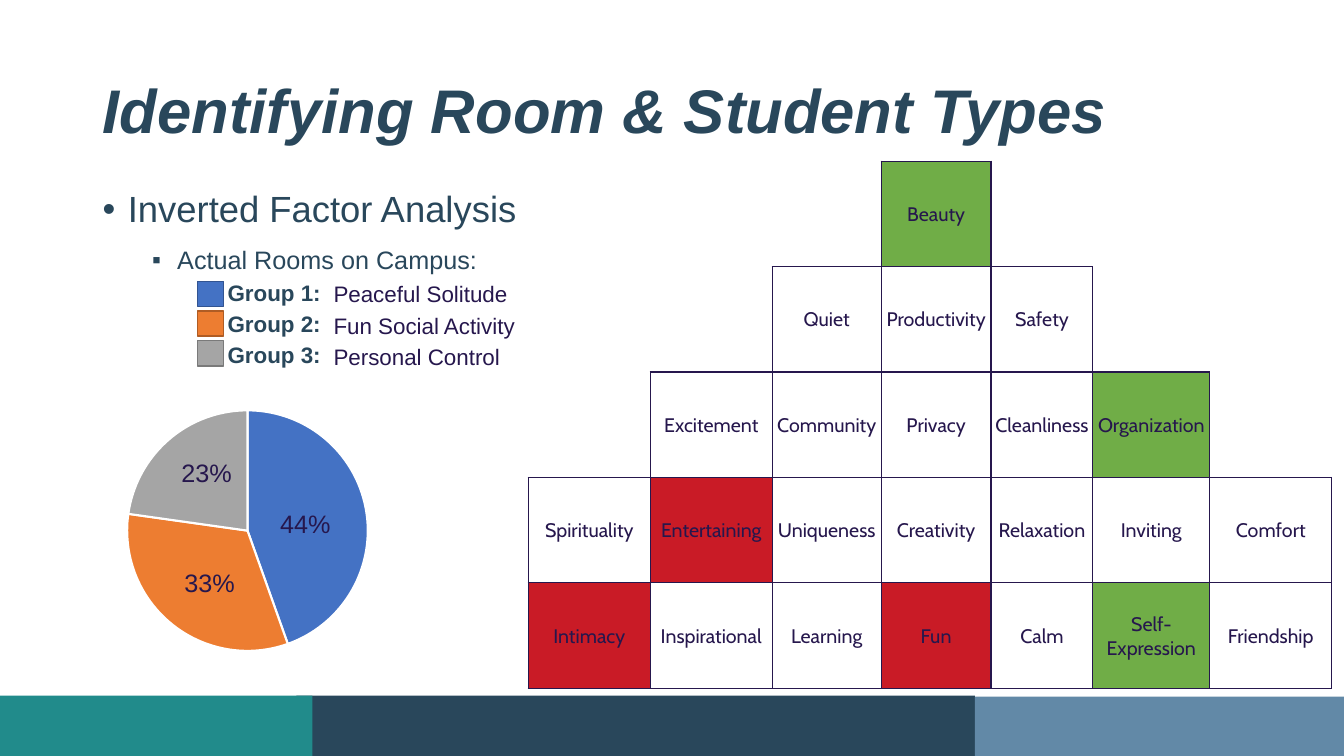
"""Build the slide on room and student types: group legend, pie chart and pyramid table."""
from lxml import etree
from pptx import Presentation, util as u
from pptx.chart.data import CategoryChartData
from pptx.dml.color import RGBColor
from pptx.enum import chart as charts, shapes, text
from pptx.oxml import parse_xml
from pptx.oxml.ns import nsdecls, qn

THEME = {
    "slate": "29475B", "ink": "26174D", "teal": "218B8B", "steel": "6289A7",
    "white": "FFFFFF", "green": "70AD47", "red": "C91B26",
    "font": "Arial", "table_font": "Cabin",
    "title": 44, "heading": 26, "subheading": 18, "label": 16, "cell": 14,
}


def format_font(font, size, color, **values):
    values = {"name": THEME["font"], "size": u.Pt(size), **values}
    for name, value in values.items():
        setattr(font, name, value)
    font.color.rgb = RGBColor.from_string(color)


def add_text(box, lines, wrap=True):
    frame = slide.shapes.add_textbox(*map(u.Inches, box)).text_frame
    frame.word_wrap = wrap
    frame.auto_size = text.MSO_AUTO_SIZE.NONE if wrap else text.MSO_AUTO_SIZE.SHAPE_TO_FIT_TEXT
    for index, (words, size, color, bold, indent, bullet) in enumerate(lines):
        paragraph = frame.paragraphs[0] if index == 0 else frame.add_paragraph()
        if wrap:
            paragraph.line_spacing = 0.9
            paragraph.space_before = u.Pt(5 if index else 0)
            properties = paragraph._p.get_or_add_pPr()
            properties.set("marL", str(u.Inches(indent)))
            properties.set("indent", str(u.Inches(-0.25 if bullet else 0)))
            if bullet:
                etree.SubElement(properties, qn("a:buFont"), typeface=THEME["font"])
                etree.SubElement(properties, qn("a:buChar"), char=bullet)
        run = paragraph.add_run()
        run.text = words
        format_font(run.font, size, color, bold=bold)


presentation = Presentation()
presentation.slide_width = u.Inches(13.33)
presentation.slide_height = u.Inches(7.5)
slide = presentation.slides.add_slide(presentation.slide_layouts[5])

groups = [
    ("Group 1:", "Peaceful Solitude", 1.94, 45, "4472C4", "325491"),
    ("Group 2:", "Fun Social Activity", 2.02, 33, "ED7D31", "AF5C24"),
    ("Group 3:", "Personal Control", 1.87, 23, "A5A5A5", "7A7A7A"),
]
bands = [(2.94, 6.9, 6.73, 0.68, THEME["slate"], None),
         (0, 6.9, 3.1, 0.68, THEME["teal"], None),
         (9.67, 6.91, 3.67, 0.68, THEME["steel"], None)]
swatches = [(1.96, 2.79 + 0.295 * index, 0.26, 0.25, group[4], group[5])
            for index, group in enumerate(groups)]
for *box, fill, line in bands + swatches:
    shape = slide.shapes.add_shape(shapes.MSO_SHAPE.RECTANGLE, *map(u.Inches, box))
    shape.shadow.inherit = False
    shape.fill.solid()
    shape.fill.fore_color.rgb = RGBColor.from_string(fill)
    if line:
        shape.line.color.rgb = RGBColor.from_string(line)
        shape.line.width = u.Pt(1)
    else:
        shape.line.fill.background()

title = slide.shapes.title
for name, value in {"left": 0.92, "top": 0.4, "width": 11.5, "height": 1.45}.items():
    setattr(title, name, u.Inches(value))
title.text_frame.text = "Identifying Room & Student Types"
title.text_frame.auto_size = text.MSO_AUTO_SIZE.NONE
title.text_frame.vertical_anchor = text.MSO_ANCHOR.MIDDLE
paragraph = title.text_frame.paragraphs[0]
paragraph.alignment = text.PP_ALIGN.LEFT
paragraph.line_spacing = 0.9
format_font(paragraph.runs[0].font, THEME["title"], THEME["slate"], bold=True, italic=True)

add_text((0.92, 1.85, 12.01, 1.63),
         [("Inverted Factor Analysis", THEME["heading"], THEME["slate"], False, 0.25, "•")])
add_text((0.41, 2.41, 5.94, 3.63),
         [("Actual Rooms on Campus:", THEME["subheading"], THEME["slate"], False, 1.25, "▪")]
         + [(group[0], THEME["label"], THEME["slate"], True, 1.75, None) for group in groups])
for index, group in enumerate(groups):
    add_text((3.21, 2.73 + 0.315 * index, group[2], 0.37),
             [(group[1], THEME["label"], THEME["ink"], False, 0, None)], wrap=False)

pyramid = [
    ["", "", "", "Beauty", "", "", ""],
    ["", "", "Quiet", "Productivity", "Safety", "", ""],
    ["", "Excitement", "Community", "Privacy", "Cleanliness", "Organization", ""],
    ["Spirituality", "Entertaining", "Uniqueness", "Creativity", "Relaxation", "Inviting", "Comfort"],
    ["Intimacy", "Inspirational", "Learning", "Fun", "Calm", "Self-Expression", "Friendship"],
]
cell_fills = {
    **dict.fromkeys(["Beauty", "Organization", "Self-Expression"], THEME["green"]),
    **dict.fromkeys(["Entertaining", "Intimacy", "Fun"], THEME["red"]),
}
column_widths = [1.21, 1.21, 1.08, 1.09, 1.01, 1.16, 1.21]
table = slide.shapes.add_table(5, 7, *map(u.Inches, (5.24, 1.6, 7.97, 5.23))).table
table.first_row = table.horz_banding = False
for column, width in zip(table.columns, column_widths):
    column.width = u.Inches(width)
for row in table.rows:
    row.height = u.Inches(5.23 / 5)
labelled = {(row, column) for row, words in enumerate(pyramid)
            for column, word in enumerate(words) if word}
sides = {"lnL": (0, -1), "lnR": (0, 1), "lnT": (-1, 0), "lnB": (1, 0)}
for row, words in enumerate(pyramid):
    for column, word in enumerate(words):
        cell = table.cell(row, column)
        margins = {"margin_left": 0.01, "margin_right": 0.01, "margin_top": 0.01, "margin_bottom": 0}
        for name, value in margins.items():
            setattr(cell, name, u.Inches(value))
        cell.vertical_anchor = text.MSO_ANCHOR.MIDDLE
        for side, (down, across) in sides.items():
            edged = labelled & {(row, column), (row + down, column + across)}
            paint = (f'<a:solidFill><a:srgbClr val="{THEME["ink"]}"/></a:solidFill>'
                     if edged else "<a:noFill/>")
            cell._tc.get_or_add_tcPr().append(
                parse_xml(f'<a:{side} {nsdecls("a")} w="{u.Pt(1)}">{paint}</a:{side}>'))
        if word in cell_fills:
            cell.fill.solid()
            cell.fill.fore_color.rgb = RGBColor.from_string(cell_fills[word])
        else:
            cell.fill.background()
        if word:
            paragraph = cell.text_frame.paragraphs[0]
            paragraph.alignment = text.PP_ALIGN.CENTER
            run = paragraph.add_run()
            run.text = word
            format_font(run.font, THEME["cell"], THEME["ink"], name=THEME["table_font"])

chart_data = CategoryChartData()
chart_data.categories = ["1", "2", "3"]
chart_data.add_series("Series 1", [group[3] for group in groups])
chart = slide.shapes.add_chart(charts.XL_CHART_TYPE.PIE,
                               *map(u.Inches, (0.59, 3.93, 3.73, 2.67)), chart_data).chart
chart.has_legend = chart.has_title = False
format_font(chart.font, 10, THEME["ink"])
plot = chart.plots[0]
plot.vary_by_categories = False
for index, group in enumerate(groups):
    slice_format = plot.series[0].points[index].format
    slice_format.fill.solid()
    slice_format.fill.fore_color.rgb = RGBColor.from_string(group[4])
    slice_format.line.color.rgb = RGBColor.from_string(THEME["white"])
    slice_format.line.width = u.Pt(1.5)
plot_area = chart._chartSpace.chart.plotArea
for layout in plot_area.findall(qn("c:layout")):
    plot_area.remove(layout)
plot_area.insert(0, parse_xml(
    f'<c:layout {nsdecls("c")}><c:manualLayout><c:layoutTarget val="inner"/>'
    '<c:xMode val="edge"/><c:yMode val="edge"/><c:x val="0.18"/><c:y val="0.05"/>'
    '<c:w val="0.64"/><c:h val="0.9"/></c:manualLayout></c:layout>'))

for share, left, top in [("44%", 2.68, 4.99), ("33%", 1.73, 5.58), ("23%", 1.7, 4.49)]:
    add_text((left, top, 0.71, 0.4),
             [(share, THEME["subheading"], THEME["ink"], False, 0, None)], wrap=False)

presentation.save("out.pptx")
